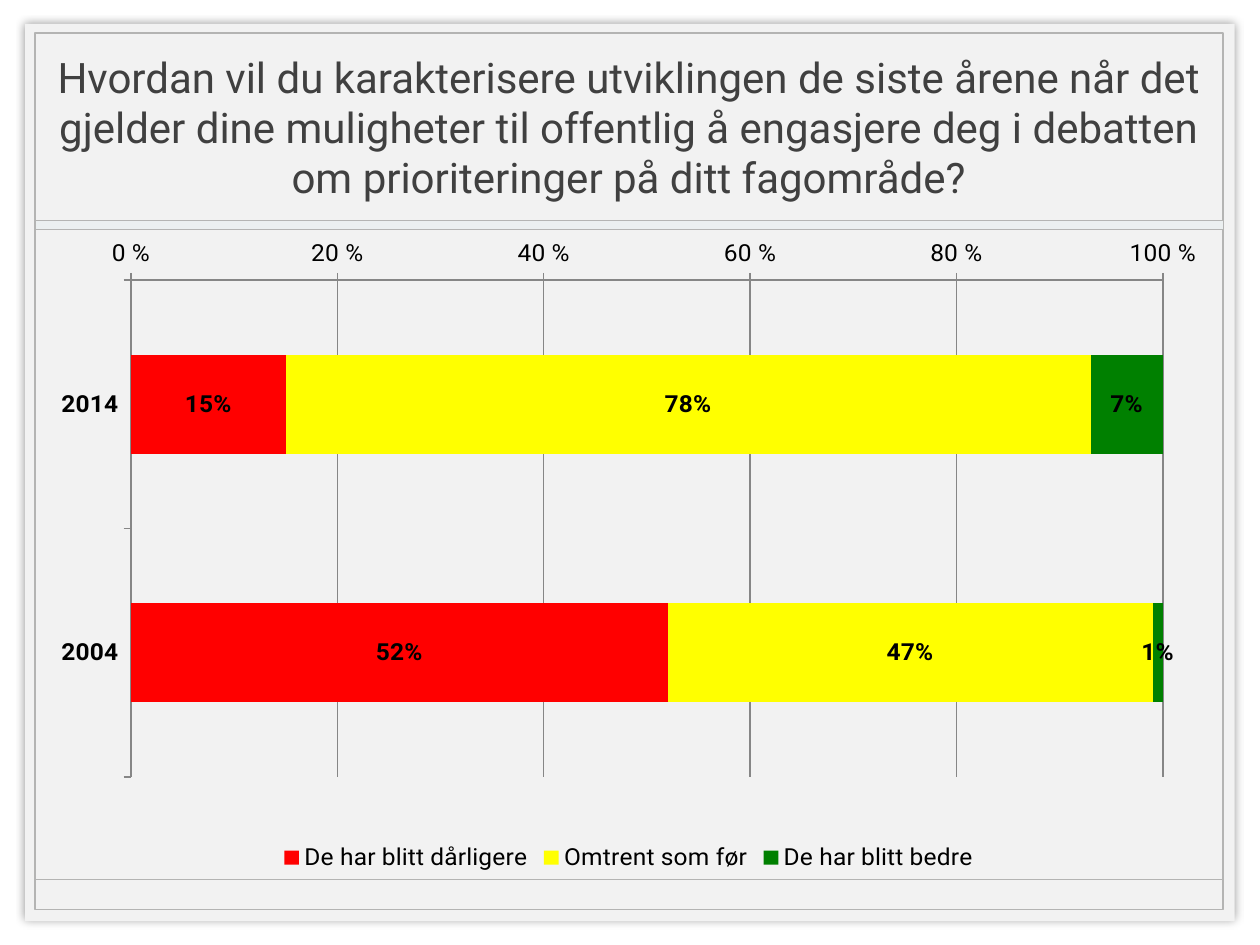
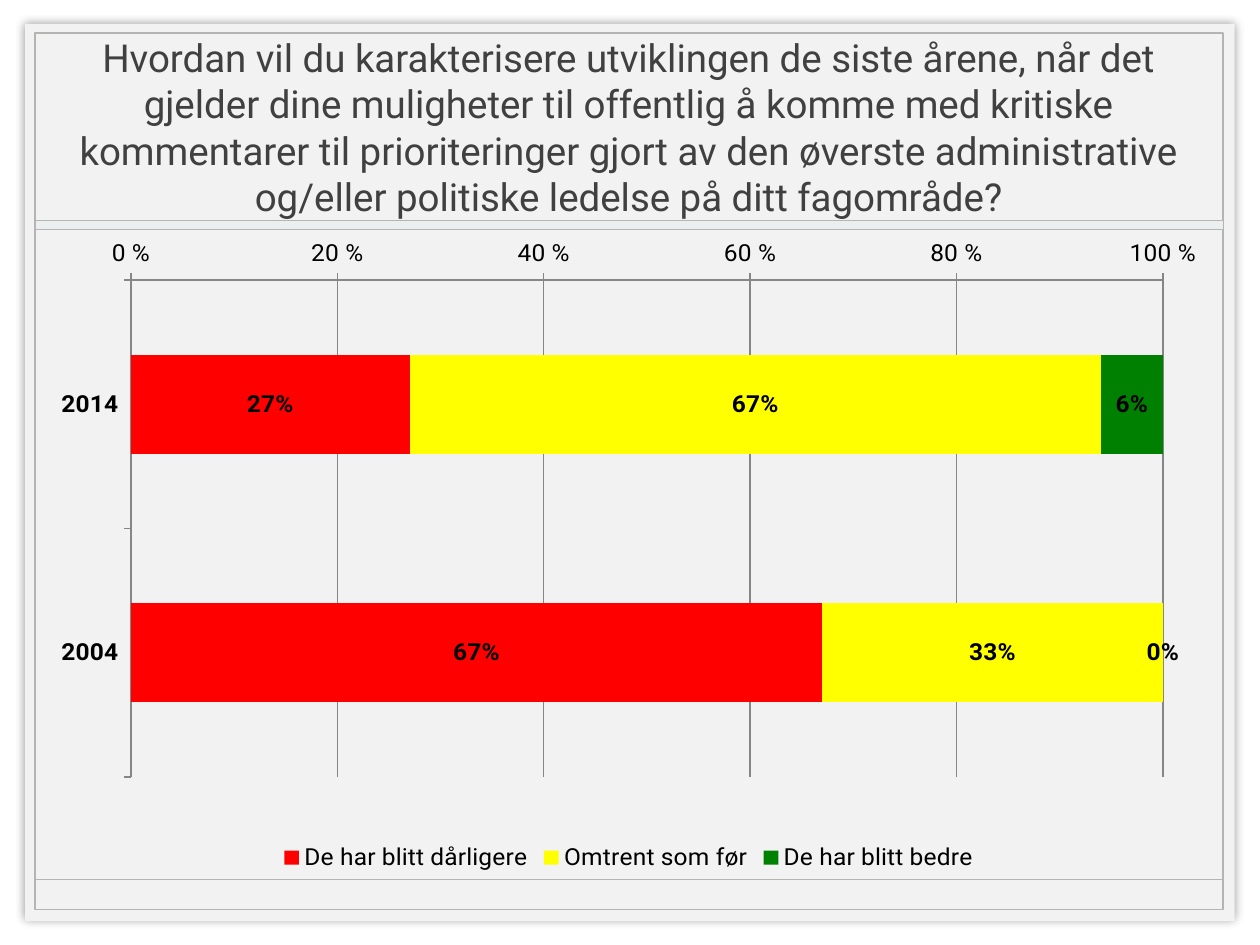
from dataclasses import dataclass

import lxml.etree
import pptx
import pptx.chart.data
import pptx.dml.color
import pptx.enum.chart
import pptx.enum.shapes
import pptx.enum.text
import pptx.oxml
import pptx.oxml.ns
import pptx.util
from pptx.util import Inches

FONT = "Roboto"
PANEL, BAND, RULE = "F2F2F2", "EBEFF0", "B4B4B3"
TITLE_COLOR, CHART_TEXT, GRID = "404040", "000000", "868686"
TITLE_ONLY_LAYOUT = 5
YEARS = ("2014", "2004")
ANSWERS = {
    "De har blitt dårligere": "FF0000",
    "Omtrent som før": "FFFF00",
    "De har blitt bedre": "008000",
}
DRAWING_NS = pptx.oxml.ns.nsdecls("a")


@dataclass(frozen=True)
class Box:
    left: float
    top: float
    width: float
    height: float

    def lengths(self) -> tuple:
        return tuple(Inches(side) for side in (self.left, self.top, self.width, self.height))


@dataclass(frozen=True)
class FramePart:
    box: Box
    fill: str | None = None
    line_width: float = 0


@dataclass(frozen=True)
class Question:
    text: str
    size: int
    shares: tuple  # one tuple per answer, one share per year


TITLE_BOX = Box(0.3, 0.27, 9.38, 1.47)
CHART_BOX = Box(0.3, 1.9, 9.38, 5.06)
PLOT_BOX = Box(1.04, 2.0, 8.19, 4.13)
PANEL_PART = FramePart(Box(0.2, 0.19, 9.6, 7.12), fill=PANEL)
BORDER_PART = FramePart(Box(0.28, 0.26, 9.43, 6.96), line_width=1)
BAND_PART = FramePart(Box(0.28, 1.75, 9.43, 0.07), fill=BAND, line_width=0.25)
FOOTER_TOP = 6.98

QUESTIONS = (
    Question(
        "Hvordan vil du karakterisere utviklingen de siste årene når det gjelder dine "
        "muligheter til offentlig å engasjere deg i debatten om prioriteringer på ditt "
        "fagområde?",
        24,
        ((0.15, 0.52), (0.78, 0.47), (0.07, 0.01)),
    ),
    Question(
        "Hvordan vil du karakterisere utviklingen de siste årene, når det gjelder dine "
        "muligheter til offentlig å komme med kritiske kommentarer til prioriteringer "
        "gjort av den øverste administrative og/eller politiske ledelse på ditt fagområde?",
        22,
        ((0.27, 0.67), (0.67, 0.33), (0.06, 0)),
    ),
)


def color(value: str) -> pptx.dml.color.RGBColor:
    return pptx.dml.color.RGBColor.from_string(value)


def style_font(font, size: float, value: str, bold: bool = False) -> None:
    font.name = FONT
    font.size = pptx.util.Pt(size)
    font.bold = bold
    font.color.rgb = color(value)


def style_line(line, value: str, width: float) -> None:
    line.color.rgb = color(value)
    line.width = pptx.util.Pt(width)


def add_frame_part(slide, part: FramePart):
    shape = slide.shapes.add_shape(
        pptx.enum.shapes.MSO_SHAPE.RECTANGLE, *part.box.lengths()
    )
    shape.shadow.inherit = False
    if part.fill:
        shape.fill.solid()
        shape.fill.fore_color.rgb = color(part.fill)
    else:
        shape.fill.background()
    if part.line_width:
        style_line(shape.line, RULE, part.line_width)
    else:
        shape.line.fill.background()
    return shape


def add_panel_shadow(panel) -> None:
    effects = panel.element.spPr.find(pptx.oxml.ns.qn("a:effectLst"))
    effects.append(pptx.oxml.parse_xml(
        f'<a:outerShdw {DRAWING_NS} blurRad="{pptx.util.Pt(5)}" dist="0" dir="0" '
        'algn="ctr" rotWithShape="0"><a:srgbClr val="000000"><a:alpha val="40000"/>'
        "</a:srgbClr></a:outerShdw>"
    ))


def add_footer_rule(slide):
    left, right = BORDER_PART.box.left, BORDER_PART.box.left + BORDER_PART.box.width
    rule = slide.shapes.add_connector(
        pptx.enum.shapes.MSO_CONNECTOR.STRAIGHT,
        Inches(left), Inches(FOOTER_TOP), Inches(right), Inches(FOOTER_TOP),
    )
    style_line(rule.line, RULE, 1)
    lxml.etree.SubElement(rule.element.spPr, pptx.oxml.ns.qn("a:effectLst"))
    return rule


def move_frame_to_layout(slide) -> None:
    """Draw the frame on the slide, then hand it to the layout all slides share."""
    panel = add_frame_part(slide, PANEL_PART)
    add_panel_shadow(panel)
    frame = (
        panel,
        add_frame_part(slide, BORDER_PART),
        add_footer_rule(slide),
        add_frame_part(slide, BAND_PART),
    )
    for number, shape in enumerate(frame, start=101):
        shape.element.xpath(".//p:cNvPr")[0].set("id", str(number))
        slide.slide_layout.shapes.element.append(shape.element)


def fill_title(slide, question: Question) -> None:
    title = slide.shapes.title
    title.left, title.top, title.width, title.height = TITLE_BOX.lengths()
    frame = title.text_frame
    frame.word_wrap = True
    frame.auto_size = pptx.enum.text.MSO_AUTO_SIZE.NONE
    frame.vertical_anchor = pptx.enum.text.MSO_ANCHOR.MIDDLE
    paragraph = frame.paragraphs[0]
    paragraph.alignment = pptx.enum.text.PP_ALIGN.CENTER
    run = paragraph.add_run()
    run.text = question.text
    style_font(run.font, question.size, TITLE_COLOR)


def set_plot_area(chart) -> None:
    """Fix the inner plot area as fractions of the chart."""
    fractions = {
        "x": (PLOT_BOX.left - CHART_BOX.left) / CHART_BOX.width,
        "y": (PLOT_BOX.top - CHART_BOX.top) / CHART_BOX.height,
        "w": PLOT_BOX.width / CHART_BOX.width,
        "h": PLOT_BOX.height / CHART_BOX.height,
    }
    modes = '<c:xMode val="edge"/><c:yMode val="edge"/>'
    values = "".join(f'<c:{key} val="{value:.4f}"/>' for key, value in fractions.items())
    plot_area = chart.element.xpath(".//c:plotArea")[0]
    for layout in plot_area.xpath("./c:layout"):
        plot_area.remove(layout)
    plot_area.insert(0, pptx.oxml.parse_xml(
        f'<c:layout {pptx.oxml.ns.nsdecls("c")}><c:manualLayout>'
        f'<c:layoutTarget val="inner"/>{modes}{values}</c:manualLayout></c:layout>'
    ))


def style_axes(chart) -> None:
    years, shares = chart.category_axis, chart.value_axis
    for axis in (years, shares):
        axis.major_tick_mark = pptx.enum.chart.XL_TICK_MARK.OUTSIDE
        style_font(axis.tick_labels.font, 14, CHART_TEXT, bold=axis is years)
        style_line(axis.format.line, GRID, 0.75)
    years.has_major_gridlines = False
    years.reverse_order = True
    years.crosses = pptx.enum.chart.XL_AXIS_CROSSES.MAXIMUM
    shares.minimum_scale, shares.maximum_scale, shares.major_unit = 0, 1, 0.2
    shares.has_major_gridlines = True
    style_line(shares.major_gridlines.format.line, GRID, 0.75)
    shares.tick_labels.number_format = "0 %"
    shares.tick_labels.number_format_is_linked = False


def style_series(series, value: str) -> None:
    series.format.fill.solid()
    series.format.fill.fore_color.rgb = color(value)
    series.invert_if_negative = False
    labels = series.data_labels
    labels.show_value = True
    labels.number_format = "0%"
    labels.number_format_is_linked = False
    style_font(labels.font, 14, CHART_TEXT, bold=True)


def add_answer_chart(slide, question: Question) -> None:
    data = pptx.chart.data.CategoryChartData(number_format="0%")
    data.categories = YEARS
    for answer, shares in zip(ANSWERS, question.shares):
        data.add_series(answer, shares)
    chart = slide.shapes.add_chart(
        pptx.enum.chart.XL_CHART_TYPE.BAR_STACKED_100, *CHART_BOX.lengths(), data
    ).chart
    style_font(chart.font, 18, CHART_TEXT)
    chart.has_title = False
    chart.has_legend = True
    chart.legend.position = pptx.enum.chart.XL_LEGEND_POSITION.BOTTOM
    chart.legend.include_in_layout = False
    style_font(chart.legend.font, 14, CHART_TEXT)
    plot = chart.plots[0]
    plot.vary_by_categories = False
    plot.gap_width, plot.overlap = 150, 100
    for series, value in zip(plot.series, ANSWERS.values()):
        style_series(series, value)
    style_axes(chart)
    set_plot_area(chart)


def main() -> None:
    presentation = pptx.Presentation()
    presentation.slide_width, presentation.slide_height = Inches(10), Inches(7.5)
    layout = presentation.slide_layouts[TITLE_ONLY_LAYOUT]
    slides = [presentation.slides.add_slide(layout) for _ in QUESTIONS]
    move_frame_to_layout(slides[0])
    for slide, question in zip(slides, QUESTIONS):
        fill_title(slide, question)
        add_answer_chart(slide, question)
    presentation.save("out.pptx")


if __name__ == "__main__":
    main()
